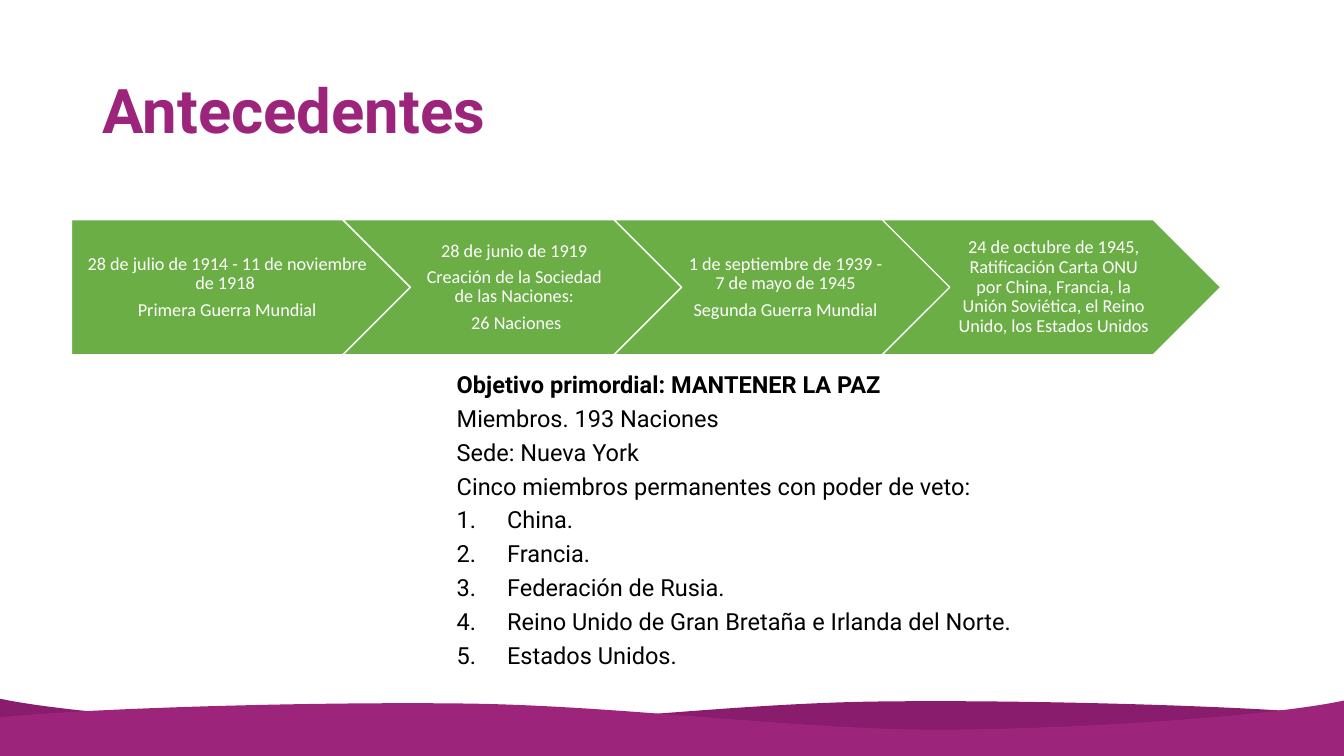
"""Build the slide about the background of the UN."""
from dataclasses import dataclass

import lxml.etree
import pptx
import pptx.dml.color
import pptx.enum.shapes
import pptx.enum.text
import pptx.oxml.ns
import pptx.util
from pptx.util import Inches

ALIGN = pptx.enum.text.PP_ALIGN
ANCHOR = pptx.enum.text.MSO_ANCHOR
SHAPE = pptx.enum.shapes.MSO_SHAPE


@dataclass(frozen=True)
class Theme:
    """Colours, fonts and type sizes of the slide."""
    purple: str = "9C247B"
    dark_purple: str = "891C6C"
    green: str = "6BAE45"
    white: str = "FFFFFF"
    black: str = "000000"
    heading_font: str = "Roboto"
    step_font: str = "Calibri"
    title_size: float = 44
    body_size: float = 16.8
    step_size: float = 13


THEME = Theme()

STEPS = [
    (0.71, SHAPE.PENTAGON, ["28 de julio de 1914 - 11 de noviembre de 1918 ",
                            "Primera Guerra Mundial"]),
    (3.4, SHAPE.CHEVRON, ["28 de junio de 1919",
                          "Creación de la Sociedad de las Naciones:",
                          " 26 Naciones"]),
    (6.09, SHAPE.CHEVRON, ["1 de septiembre de 1939 - 7 de mayo de 1945",
                           "Segunda Guerra Mundial"]),
    (8.75, SHAPE.CHEVRON, ["24 de octubre de 1945, Ratificación Carta ONU por China, "
                           "Francia, la Unión Soviética, el Reino Unido, "
                           "los Estados Unidos"]),
]
GOAL = "Objetivo primordial: MANTENER LA PAZ"
FACTS = ["Miembros. 193 Naciones", "Sede: Nueva York",
         "Cinco miembros permanentes con poder de veto:"]
VETO_MEMBERS = ["China.", "Francia.", "Federación de Rusia.",
                "Reino Unido de Gran Bretaña e Irlanda del Norte.",
                "Estados Unidos."]

WAVE_CREST = [
    (13.33, 7.1),
    (12.56, 7.01), (10.26, 6.94), (8.7, 6.96),
    (7.15, 6.98), (5.43, 7.22), (3.98, 7.22),
    (2.53, 7.21), (0.68, 7.08), (-0.01, 6.93),
]
WAVE_BASE = [(-0.01, 7.49), (13.33, 7.5)]


def rgb(colour):
    """Return a hex colour as an RGBColor."""
    return pptx.dml.color.RGBColor.from_string(colour)


def add_run(paragraph, text, font, size, colour, bold=False):
    """Append one formatted run to a paragraph."""
    run = paragraph.add_run()
    run.text = text
    run.font.name = font
    run.font.size = pptx.util.Pt(size)
    run.font.bold = bold
    run.font.color.rgb = rgb(colour)


def next_paragraph(frame, index):
    """Return the first paragraph of a frame, or a new one after it."""
    return frame.add_paragraph() if index else frame.paragraphs[0]


def place(shape, left, top, width, height):
    """Move and size a shape, in inches."""
    shape.left, shape.top = Inches(left), Inches(top)
    shape.width, shape.height = Inches(width), Inches(height)


def curve_crest(wave):
    """Turn each three segments of the wave's crest into one Bézier curve."""
    segments = list(wave._element.iter(pptx.oxml.ns.qn("a:lnTo")))
    for start in range(0, len(WAVE_CREST) - 1, 3):
        first, second, end = segments[start:start + 3]
        curve = lxml.etree.Element(pptx.oxml.ns.qn("a:cubicBezTo"))
        first.addprevious(curve)
        for segment in (first, second, end):
            curve.append(segment[0])
            segment.getparent().remove(segment)


def add_wave(slide, outline, colour):
    """Draw one filled footer wave."""
    points = [(Inches(x), Inches(y)) for x, y in outline]
    builder = slide.shapes.build_freeform(*points[0])
    builder.add_line_segments(points[1:], close=True)
    wave = builder.convert_to_shape()
    curve_crest(wave)
    wave.shadow.inherit = False
    wave.fill.solid()
    wave.fill.fore_color.rgb = rgb(colour)
    wave.line.fill.background()


def add_step(slide, left, outline, lines):
    """Draw one arrow of the timeline with its text."""
    step = slide.shapes.add_shape(outline, Inches(left), Inches(2.18),
                                  Inches(3.36), Inches(1.34))
    step.shadow.inherit = False
    step.fill.solid()
    step.fill.fore_color.rgb = rgb(THEME.green)
    step.line.color.rgb = rgb(THEME.white)
    step.line.width = pptx.util.Pt(1)
    frame = step.text_frame
    frame.word_wrap = True
    frame.vertical_anchor = ANCHOR.MIDDLE
    frame.margin_left = Inches(0.08 if outline == SHAPE.PENTAGON else 0.06)
    frame.margin_right = Inches(0.02)
    frame.margin_top = frame.margin_bottom = Inches(0.04)
    for index, line in enumerate(lines):
        paragraph = next_paragraph(frame, index)
        paragraph.alignment = ALIGN.CENTER
        paragraph.line_spacing = 0.9
        paragraph.space_after = pptx.util.Pt(0.35 * THEME.step_size)
        add_run(paragraph, line, THEME.step_font, THEME.step_size, THEME.white)


def set_numbering(paragraph, numbered):
    """Number a paragraph with a hanging indent, or clear its bullet."""
    properties = paragraph._p.get_or_add_pPr()
    indent = Inches(0.5) if numbered else 0
    properties.set("marL", str(indent))
    properties.set("indent", str(-indent))
    tag = "a:buAutoNum" if numbered else "a:buNone"
    bullet = lxml.etree.SubElement(properties, pptx.oxml.ns.qn(tag))
    if numbered:
        bullet.set("type", "arabicPeriod")


def fill_title(title):
    """Place and write the title."""
    place(title, 0.92, 0.4, 11.5, 1.45)
    title.text_frame.vertical_anchor = ANCHOR.MIDDLE
    title.text_frame.auto_size = pptx.enum.text.MSO_AUTO_SIZE.NONE
    paragraph = title.text_frame.paragraphs[0]
    paragraph.alignment = ALIGN.LEFT
    paragraph.line_spacing = 0.9
    add_run(paragraph, "Antecedentes", THEME.heading_font, THEME.title_size,
            THEME.purple, bold=True)


def fill_body(body):
    """Place and write the goal, the facts and the numbered members."""
    place(body, 4.43, 3.7, 10.66, 3.05)
    frame = body.text_frame
    frame.auto_size = pptx.enum.text.MSO_AUTO_SIZE.NONE
    frame.vertical_anchor = ANCHOR.TOP
    for index, line in enumerate([GOAL] + FACTS + VETO_MEMBERS):
        paragraph = next_paragraph(frame, index)
        paragraph.alignment = ALIGN.JUSTIFY
        paragraph.line_spacing = 0.7
        paragraph.space_before = pptx.util.Pt(10)
        set_numbering(paragraph, line in VETO_MEMBERS)
        add_run(paragraph, line, THEME.heading_font, THEME.body_size,
                THEME.black, bold=line == GOAL)


def main():
    """Build and save the slide."""
    deck = pptx.Presentation()
    deck.slide_width, deck.slide_height = Inches(13.33), Inches(7.5)
    slide = deck.slides.add_slide(deck.slide_layouts[1])
    back_wave = WAVE_CREST + WAVE_BASE
    front_wave = [(13.32 - x, y + 0.02) for x, y in back_wave]
    add_wave(slide, back_wave, THEME.dark_purple)
    add_wave(slide, front_wave, THEME.purple)
    for left, outline, lines in STEPS:
        add_step(slide, left, outline, lines)
    fill_body(slide.placeholders[1])
    fill_title(slide.shapes.title)
    deck.save("out.pptx")


if __name__ == "__main__":
    main()
